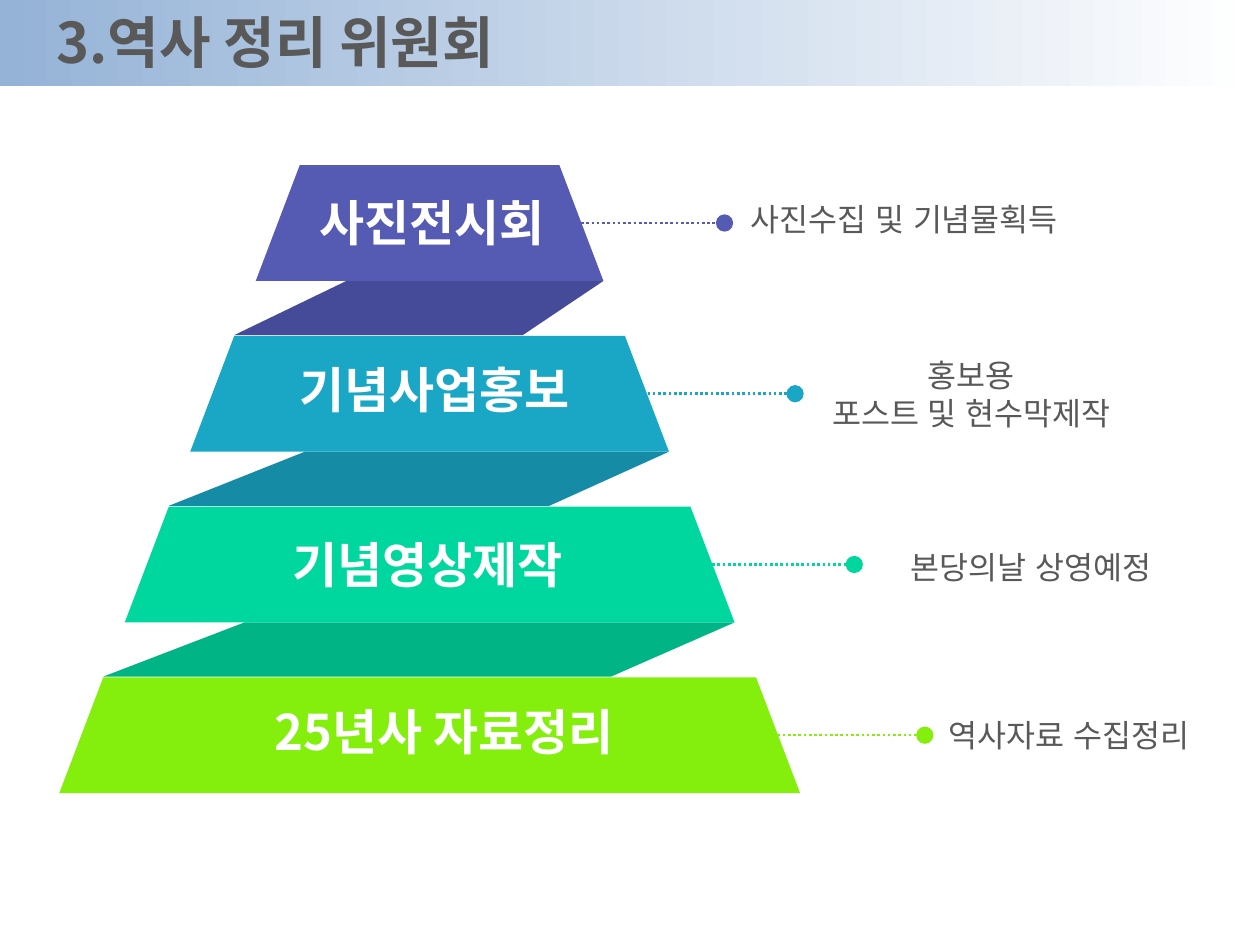
from lxml.etree import SubElement
from pptx import Presentation
from pptx.dml.color import RGBColor
from pptx.enum.dml import MSO_LINE
from pptx.enum.shapes import MSO_CONNECTOR, MSO_SHAPE
from pptx.enum.text import MSO_ANCHOR, PP_ALIGN
from pptx.oxml.ns import qn
from pptx.util import Inches, Pt

COLORS = {
    "banner": "95B3D7", "white": "FFFFFF", "text": "595959",
    "violet": "555BB2", "violet_fold": "454B99",
    "blue": "1AA6C5", "blue_fold": "168BA6",
    "green": "00D79E", "green_fold": "00B485",
    "lime": "84EE0D",
}
HEADING = {"name": "Noto Sans CJK KR", "size": Pt(28), "bold": True}
TITLE = {**HEADING, "size": Pt(32)}
NOTE = {"name": "Arial", "size": Pt(18), "bold": False}

CENTER, TOP = 3.41, 1.31
TIER_HEIGHT, FOLD_HEIGHT = 0.92, 0.43
PITCH = 1.355
HALF_BASE, HALF_STEP, SLANT = 1.38, 0.52, 0.35

# Boxes are (left, top, width, height); a fold is the x of its two inner corners.
TIERS = [
    {"color": "violet", "heading": "사진전시회", "heading_box": (2.31, 1.48, 2.24, 0.57),
     "fold": (2.75, 4.15), "leader": (4.57, 5.75), "note": ["사진수집 및 기념물획득"],
     "note_box": (5.86, 1.54, 3.14, 0.4), "align": PP_ALIGN.LEFT},
    {"color": "blue", "heading": "기념사업홍보", "heading_box": (2.07, 2.8, 2.76, 0.57),
     "fold": (2.42, 4.36), "leader": (5.14, 6.31), "note": ["홍보용", "포스트 및 현수막제작"],
     "note_box": (6.34, 2.77, 2.74, 0.71), "align": PP_ALIGN.CENTER},
    {"color": "green", "heading": "기념영상제작", "heading_box": (1.99, 4.19, 2.8, 0.57),
     "fold": (1.94, 4.85), "leader": (5.61, 6.78), "note": ["본당의날 상영예정"],
     "note_box": (7.13, 4.3, 2.55, 0.4), "align": PP_ALIGN.LEFT},
    {"color": "lime", "heading": "25년사 자료정리", "heading_box": (1.82, 5.52, 3.41, 0.57),
     "fold": None, "leader": (6.17, 7.34), "note": ["역사자료 수집정리"],
     "note_box": (7.43, 5.63, 2.37, 0.4), "align": PP_ALIGN.LEFT},
]


def rgb(key):
    return RGBColor.from_string(COLORS[key])


def add_text(slide, box, lines, style, color, align=PP_ALIGN.LEFT):
    frame = slide.shapes.add_textbox(*map(Inches, box)).text_frame
    frame.word_wrap = True
    frame.vertical_anchor = MSO_ANCHOR.MIDDLE
    for number, line in enumerate(lines):
        paragraph = frame.add_paragraph() if number else frame.paragraphs[0]
        paragraph.alignment = align
        run = paragraph.add_run()
        run.text = line
        for attribute, value in style.items():
            setattr(run.font, attribute, value)
        run.font.color.rgb = rgb(color)
        SubElement(run.font._element, qn("a:ea"), typeface=style["name"])


def add_polygon(slide, corners, color):
    start, *others = [(Inches(x), Inches(y)) for x, y in corners]
    builder = slide.shapes.build_freeform(*start)
    builder.add_line_segments(others, close=True)
    polygon = builder.convert_to_shape()
    polygon.shadow.inherit = False
    polygon.fill.solid()
    polygon.fill.fore_color.rgb = rgb(color)
    polygon.line.fill.background()


def add_leader(slide, start, end, y, color):
    """Draw a dotted line that ends in a large dot."""
    leader = slide.shapes.add_connector(
        MSO_CONNECTOR.STRAIGHT, Inches(start), Inches(y), Inches(end), Inches(y))
    leader.line.color.rgb = rgb(color)
    leader.line.width = Pt(1.5)
    leader.line.dash_style = MSO_LINE.ROUND_DOT
    SubElement(leader.line._get_or_add_ln(), qn("a:tailEnd"), type="oval", w="lg", len="lg")
    SubElement(leader._element.spPr, qn("a:effectLst"))


def add_banner(slide, box):
    left, top, width, height = box
    band = slide.shapes.add_shape(MSO_SHAPE.RECTANGLE, *map(Inches, box))
    band.shadow.inherit = False
    band.line.fill.background()
    band.fill.gradient()
    band.fill.gradient_angle = 0
    for stop, position, color in zip(band.fill.gradient_stops, (0, 1), ("banner", "white")):
        stop.position = position
        stop.color.rgb = rgb(color)
    title_box = (left + 0.35, top + 0.14, 4.25, 0.38)
    add_text(slide, title_box, ["3.역사 정리 위원회"], TITLE, "text")


def add_pyramid(slide, center, top):
    for level, tier in enumerate(TIERS):
        tier_top = top + level * PITCH
        base = tier_top + TIER_HEIGHT
        half = HALF_BASE + level * HALF_STEP
        if tier["fold"]:
            inner_left, inner_right = tier["fold"]
            next_top = base + FOLD_HEIGHT
            next_left = center - half - HALF_STEP + SLANT
            add_polygon(slide, [(inner_right, next_top), (next_left, next_top),
                                (inner_left, base), (center + half, base)],
                        tier["color"] + "_fold")
        add_polygon(slide, [(center - half, base), (center + half, base),
                            (center + half - SLANT, tier_top),
                            (center - half + SLANT, tier_top)], tier["color"])
        add_text(slide, tier["heading_box"], [tier["heading"]], HEADING, "white",
                 PP_ALIGN.CENTER)


def add_notes_column(slide, top):
    for level, tier in enumerate(TIERS):
        middle = top + level * PITCH + TIER_HEIGHT / 2
        add_leader(slide, *tier["leader"], middle, tier["color"])
        add_text(slide, tier["note_box"], tier["note"], NOTE, "text", tier["align"])


def main():
    presentation = Presentation()
    presentation.slide_width, presentation.slide_height = Inches(10), Inches(7.5)
    slide = presentation.slides.add_slide(presentation.slide_layouts[6])
    add_banner(slide, (0, 0, 10, 0.68))
    add_pyramid(slide, CENTER, TOP)
    add_notes_column(slide, TOP)
    presentation.save("out.pptx")


if __name__ == "__main__":
    main()
